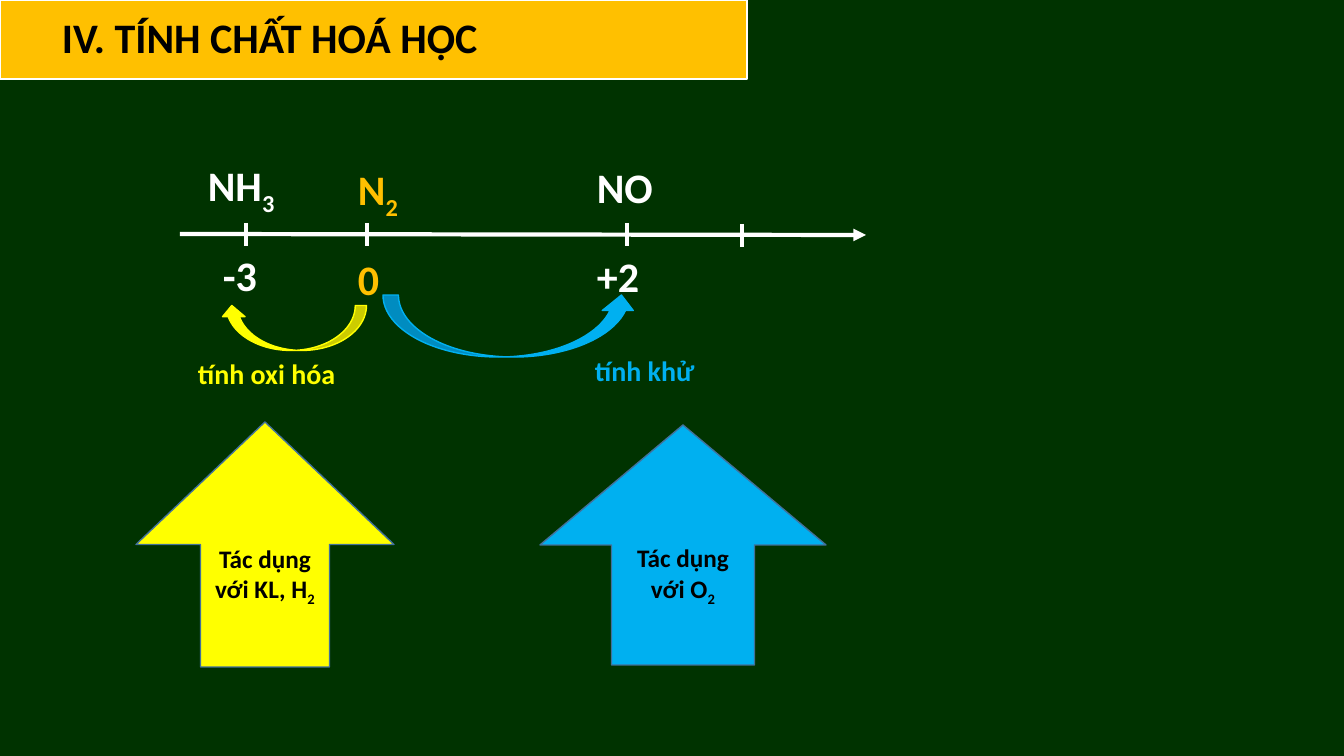
import pptx
import pptx.util
import pptx.dml.color
import pptx.enum.shapes
import pptx.enum.text
import pptx.oxml.ns
import lxml.etree

PX = 914400 / 100.8
WHITE, BLACK, GOLD, YELLOW, BLUE = "FFFFFF", "000000", "FFC000", "FFFF00", "00B0F0"
SHAPE = pptx.enum.shapes.MSO_SHAPE
ALIGN = pptx.enum.text.PP_ALIGN


def paint(target, fill, line, width=1):
    """Give a shape a solid fill and an outline."""
    target.fill.solid()
    target.fill.fore_color.rgb = pptx.dml.color.RGBColor.from_string(fill)
    target.line.color.rgb = pptx.dml.color.RGBColor.from_string(line)
    target.line.width = pptx.util.Pt(width)


def write(box, text, size, color, subscript="", align=ALIGN.LEFT):
    """Write one bold paragraph, with an optional subscript run at its end."""
    box.text_frame.word_wrap = True
    para = box.text_frame.paragraphs[0]
    para.alignment = align
    for part, baseline in ((text, None), (subscript, "-25000")):
        if not part:
            continue
        span = para.add_run()
        span.text = part
        span.font.name = "Calibri"
        span.font.size = pptx.util.Pt(size)
        span.font.bold = True
        span.font.color.rgb = pptx.dml.color.RGBColor.from_string(color)
        if baseline:
            span._r.get_or_add_rPr().set("baseline", baseline)


deck = pptx.Presentation()
deck.slide_width = round(1344 * PX)
deck.slide_height = round(756 * PX)
page = deck.slides.add_slide(deck.slide_layouts[5])
page.background.fill.solid()
page.background.fill.fore_color.rgb = pptx.dml.color.RGBColor.from_string("003300")

# Title band
title = page.shapes.title
title.left, title.top, title.width, title.height = (round(v * PX) for v in (0, 0, 747, 79))
paint(title, GOLD, WHITE)
write(title, "IV. TÍNH CHẤT HOÁ HỌC", 30, BLACK)
title.text_frame.auto_size = pptx.enum.text.MSO_AUTO_SIZE.NONE
title.text_frame.vertical_anchor = pptx.enum.text.MSO_ANCHOR.MIDDLE
title.text_frame.margin_left = round(62 * PX)
title.text_frame.paragraphs[0].line_spacing = 0.9

# Oxidation number axis: the arrow, then its ticks
axis = page.shapes.add_group_shape()
axis_lines = [(180, 234, 866, 235)]
axis_lines += [(x, top, x, top + 23) for x, top in ((246, 223), (367, 223), (627, 223), (742, 224))]
for index, ends in enumerate(axis_lines):
    line = axis.shapes.add_connector(
        pptx.enum.shapes.MSO_CONNECTOR.STRAIGHT, *(round(v * PX) for v in ends))
    line.line.color.rgb = pptx.dml.color.RGBColor.from_string(WHITE)
    line.line.width = pptx.util.Pt(3)
    if index == 0:
        head = lxml.etree.SubElement(line.line._get_or_add_ln(), pptx.oxml.ns.qn("a:tailEnd"))
        head.set("type", "triangle")
    lxml.etree.SubElement(line._element.spPr, pptx.oxml.ns.qn("a:effectLst"))

# Substances above the axis, numbers and properties below it
labels = [
    (198, 155, 97, 61, "NH", "3", 30, WHITE),
    (348, 159, 77, 61, "N", "2", 30, GOLD),
    (587, 157, 97, 61, "NO", "", 30, WHITE),
    (213, 245, 67, 61, "-3", "", 30, WHITE),
    (348, 249, 38, 61, "0", "", 30, GOLD),
    (587, 246, 81, 61, "+2", "", 30, WHITE),
    (188, 352, 205, 44, "tính oxi hóa", "", 20, YELLOW),
    (585, 349, 156, 44, "tính khử", "", 20, BLUE),
]
for left, top, width, height, text, subscript, size, color in labels:
    box = page.shapes.add_textbox(*(round(v * PX) for v in (left, top, width, height)))
    write(box, text, size, color, subscript)
    box.text_frame.auto_size = pptx.enum.text.MSO_AUTO_SIZE.SHAPE_TO_FIT_TEXT

# Curved arrows away from zero, block arrows with the reactions
arrows = [
    (SHAPE.CURVED_LEFT_ARROW, (271, 255, 45, 146), 90, YELLOW, YELLOW, "", ""),
    (SHAPE.CURVED_RIGHT_ARROW, (479, 199, 62, 254), 270, BLUE, BLUE, "", ""),
    (SHAPE.UP_ARROW, (136, 422, 258, 245), 0, YELLOW, "42719B", "Tác dụng với KL, H", "2"),
    (SHAPE.UP_ARROW, (540, 425, 286, 240), 0, BLUE, "42719B", "Tác dụng với O", "2"),
]
for kind, place, rotation, fill, outline, text, subscript in arrows:
    arrow = page.shapes.add_shape(kind, *(round(v * PX) for v in place))
    arrow.rotation = rotation
    arrow.shadow.inherit = False
    paint(arrow, fill, outline)
    if text:
        write(arrow, text, 18, BLACK, subscript, ALIGN.CENTER)
        arrow.text_frame.vertical_anchor = pptx.enum.text.MSO_ANCHOR.MIDDLE

deck.save("out.pptx")
